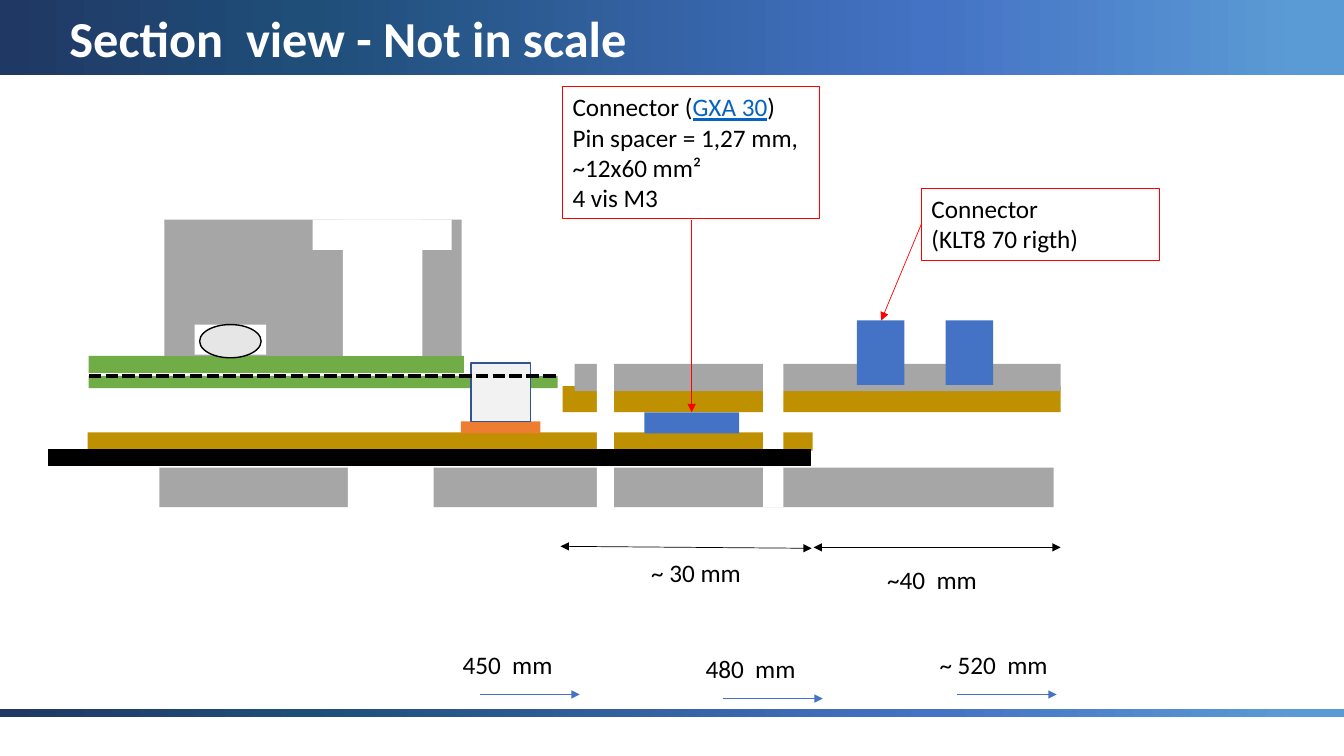
import copy

import pptx
import pptx.util
from pptx.dml.color import RGBColor
from pptx.enum.dml import MSO_LINE
from pptx.enum.shapes import MSO_CONNECTOR, MSO_SHAPE
from pptx.enum.text import MSO_ANCHOR, MSO_AUTO_SIZE, PP_ALIGN
from pptx.oxml.ns import qn
from pptx.oxml.xmlchemy import OxmlElement

# Content: lengths in px, 100 px to the inch
PX = 9144
SLIDE = (1333, 750)
FONT = "Calibri"
COLORS = {
    "black": "000000", "white": "FFFFFF", "red": "FF0000", "blue": "4472C4",
    "grey": "A6A6A6", "pale": "F2F2F2", "oval": "E7E6E6", "gold": "BF9000",
    "green": "70AD47", "orange": "ED7D31", "outline": "325491", "link": "0563C1",
}
GRADIENT = [(0, "203864"), (0.23, "1F4E79"), (0.69, "4472C4"), (0.97, "5B9BD5")]
BANDS = [(0, 0, 1333, 74), (0, 703, 1333, 8)]
TITLE = ("Section  view - Not in scale", (59, 2, 739, 71))

# Section parts from back to front: box, fill, outline
PARTS = [
    ((87, 429, 719, 18), "gold", None),
    ((88, 373, 465, 12), "green", None),
    ((88, 353, 372, 17), "green", None),
    ((639, 409, 94, 21), "blue", None),
    ((163, 218, 295, 135), "grey", None),
    ((193, 322, 71, 30), "white", None),
    ((340, 218, 79, 135), "white", None),
    ((310, 218, 138, 30), "white", None),
    ((457, 418, 79, 12), "orange", None),
    ((467, 373, 59, 21), "white", None),
    ((467, 360, 59, 58), "pale", "outline"),
    ((558, 383, 494, 26), "gold", None),
    ((158, 464, 887, 39), "grey", None),
    ((345, 448, 85, 63), "white", None),
    ((570, 361, 482, 27), "grey", None),
    ((850, 318, 47, 64), "blue", None),
    ((938, 318, 47, 64), "blue", None),
    ((592, 292, 17, 220), "white", None),
    ((757, 300, 20, 203), "white", None),
    ((48, 446, 756, 16), "black", "black"),
]
OVAL = (198, 322, 61, 33)

# Lines: start and end, colour, width, arrowheads
LINES = [
    ((914, 222, 874, 318), "red", 0.5, ["tailEnd"]),
    ((686, 218, 686, 409), "red", 0.5, ["tailEnd"]),
    ((556, 542, 805, 544), "black", 0.5, ["headEnd", "tailEnd"]),
    ((807, 543, 1052, 543), "black", 0.5, ["headEnd", "tailEnd"]),
]
WIRE = (88, 373, 552, 373)
CALLOUTS = [
    ((558, 86, 255, 131), [
        [("Connector (", "black"), ("GXA 30", "link"), (")", "black")],
        [("Pin spacer = 1,27 mm,", "black")],
        [("~12x60 mm²", "black")],
        [("4 vis M3", "black")],
    ]),
    ((914, 187, 236, 71), [
        [("Connector", "black")],
        [("(KLT8 70 rigth)", "black")],
    ]),
]
SPANS = [("~ 30 mm", (636, 548, 121, 40)), ("~40  mm", (870, 555, 154, 42))]
POSITIONS = [("450  mm", 476, 689), ("480  mm", 717, 693), ("~ 520  mm", 949, 689)]
ARROW_LENGTH = 99


def emu(lengths):
    return [length * PX for length in lengths]


def color(name):
    return RGBColor.from_string(COLORS[name])


def add_block(box, fill=None, outline=None, width=1, kind=MSO_SHAPE.RECTANGLE):
    block = page.shapes.add_shape(kind, *emu(box))
    block.shadow.inherit = False
    if fill:
        block.fill.solid()
        block.fill.fore_color.rgb = color(fill)
    else:
        block.fill.background()
    if outline:
        block.line.color.rgb = color(outline)
        block.line.width = pptx.util.Pt(width)
    else:
        block.line.fill.background()
    return block


def add_band(box):
    band = add_block(box, "blue")
    band.fill.gradient()
    band.fill.gradient_angle = 0
    stop_list = band._element.spPr.find(qn("a:gradFill")).find(qn("a:gsLst"))
    while len(stop_list) < len(GRADIENT):
        stop_list.append(copy.deepcopy(stop_list[-1]))
    for stop, (position, shade) in zip(band.fill.gradient_stops, GRADIENT):
        stop.position = position
        stop.color.rgb = RGBColor.from_string(shade)


def add_line(ends, shade, width, heads=(), dash=None):
    line = page.shapes.add_connector(MSO_CONNECTOR.STRAIGHT, *emu(ends))
    line.line.color.rgb = color(shade)
    line.line.width = pptx.util.Pt(width)
    if dash:
        line.line.dash_style = dash
    for head in heads:
        arrow = OxmlElement("a:" + head)
        arrow.set("type", "triangle")
        line.line._get_or_add_ln().append(arrow)
    line._element.spPr.append(OxmlElement("a:effectLst"))


def write(shape, paragraphs, size=18, bold=False):
    frame = shape.text_frame
    frame_format = {"word_wrap": True, "auto_size": MSO_AUTO_SIZE.NONE,
                    "vertical_anchor": MSO_ANCHOR.TOP}
    for name, value in frame_format.items():
        setattr(frame, name, value)
    for index, spans in enumerate(paragraphs):
        para = frame.add_paragraph() if index else frame.paragraphs[0]
        para.alignment = PP_ALIGN.LEFT
        for text, shade in spans:
            span = para.add_run()
            span.text = text
            span_format = {"name": FONT, "size": pptx.util.Pt(size),
                           "bold": bold, "underline": shade == "link"}
            for name, value in span_format.items():
                setattr(span.font, name, value)
            span.font.color.rgb = color(shade)


def add_label(text, box, shade="black", **style):
    write(page.shapes.add_textbox(*emu(box)), [[(text, shade)]], **style)


deck = pptx.Presentation()
deck.slide_width, deck.slide_height = emu(SLIDE)
page = deck.slides.add_slide(deck.slide_layouts[6])

# Title and footer bands
for band_box in BANDS:
    add_band(band_box)
add_label(*TITLE, shade="white", size=36, bold=True)

# Section drawing
for part in PARTS:
    add_block(*part)
add_block(OVAL, "oval", "black", kind=MSO_SHAPE.OVAL)
add_line(WIRE, "black", 3, dash=MSO_LINE.SQUARE_DOT)

# Callouts, pointers and dimension lines
for callout_box, callout_text in CALLOUTS:
    write(add_block(callout_box, outline="red", width=0.75), callout_text)
for pointer in LINES:
    add_line(*pointer)
for span_label in SPANS:
    add_label(*span_label)

# Position marks: each label sits at a fixed offset above its arrow
for position_text, left, top in POSITIONS:
    add_line((left, top, left + ARROW_LENGTH, top), "blue", 0.5, ["tailEnd"])
    add_label(position_text, (left - 27, top - 50, 154, 42))

deck.save("out.pptx")
